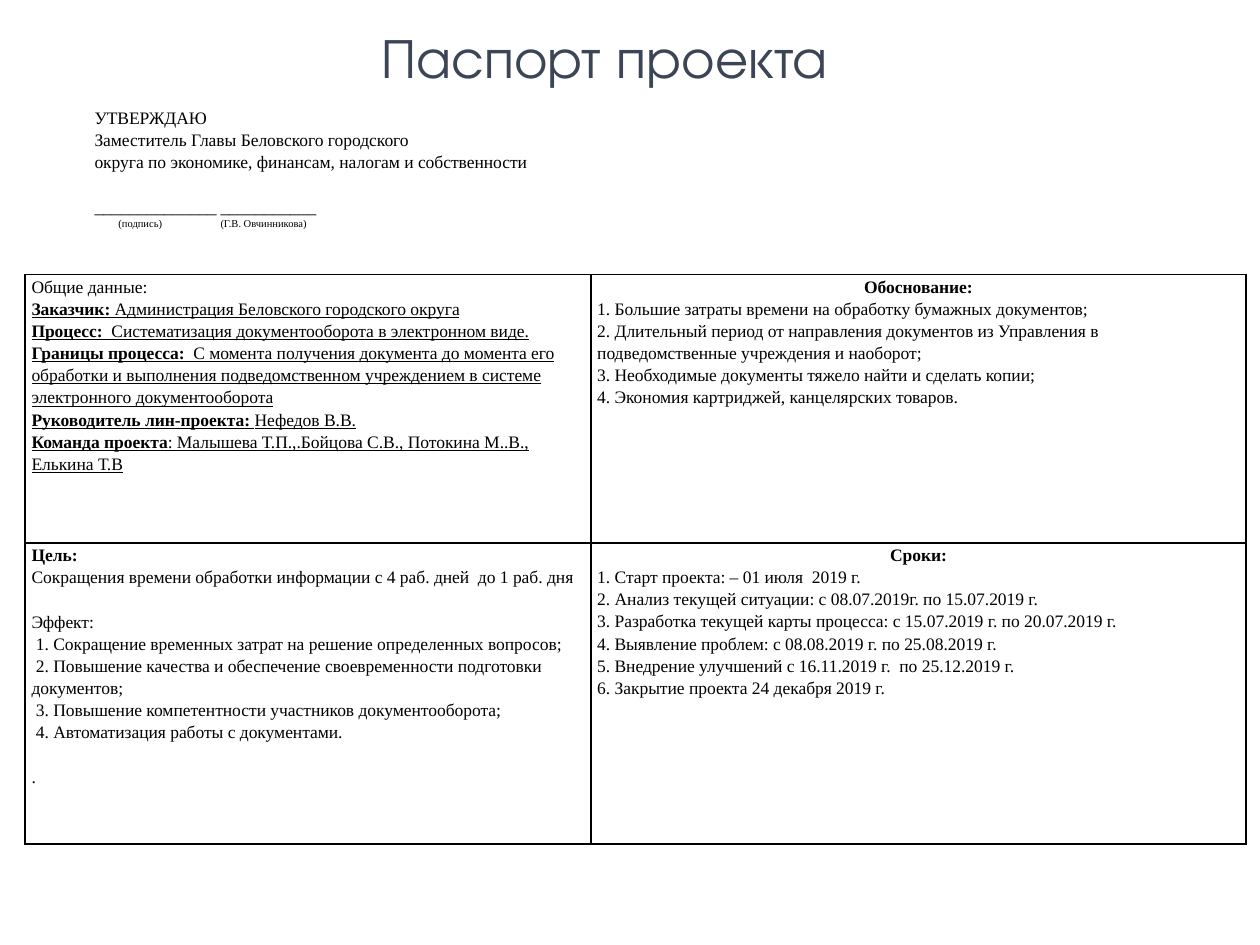
from dataclasses import dataclass
from typing import Optional

from lxml.etree import SubElement as Sub
from pptx import Presentation
from pptx.dml.color import RGBColor as Color
from pptx.enum.text import MSO_ANCHOR as Anchor, PP_ALIGN as Align
from pptx.oxml import parse_xml
from pptx.oxml.ns import nsdecls, qn
from pptx.util import Inches, Pt

HUES = {"title": "3B4555", "ink": "000000"}
SERIF = "Times New Roman"
GAP = 12.7


@dataclass
class Span:
    text: str
    bold: bool = False
    line: bool = False


@dataclass
class Para:
    spans: list[Span]
    align: Align = Align.LEFT
    size: float = 10
    gap: float = 0
    indent: float = 0
    tab: Optional[float] = None


@dataclass
class Block:
    row: int
    col: int
    last: int
    paras: list[Para]


def plain(text: str, **opts) -> Para:
    return Para([Span(text)], **opts)


def head(text: str, align: Align = Align.CENTER) -> Para:
    return Para([Span(text, bold=True)], align)


def fact(label: str, value: str) -> Para:
    return Para([Span(label, True, True), Span(value, line=True)])


def add_run(para, span: Span, size: float, face: str, hue: str) -> None:
    run = para.add_run()
    run.text = span.text
    font = run.font
    font.name, font.size = face, Pt(size)
    font.bold, font.underline = span.bold, span.line
    font.color.rgb = Color.from_string(HUES[hue])


def fill_cell(cell, paras: list[Para]) -> None:
    cell.margin_left = cell.margin_right = Inches(0.05)
    cell.margin_top = cell.margin_bottom = 0
    frame = cell.text_frame
    for num, item in enumerate(paras):
        para = frame.add_paragraph() if num else frame.paragraphs[0]
        para.alignment = item.align
        para.line_spacing = 1.15
        if item.gap:
            para.space_before = Pt(item.gap)
        props = para._p.get_or_add_pPr()
        props.set("marL", "0")
        props.set("indent", str(Inches(item.indent)))
        if item.tab:
            tabs = Sub(props, qn("a:tabLst"))
            Sub(tabs, qn("a:tab"), pos=str(Inches(item.tab)), algn="l")
        for span in item.spans:
            add_run(para, span, item.size, SERIF, "ink")


def set_edges(cell, sides: str) -> None:
    props = cell._tc.get_or_add_tcPr()
    for num, side in enumerate("LRTB"):
        paint = "<a:noFill/>"
        if side in sides:
            paint = f'<a:solidFill><a:srgbClr val="{HUES["ink"]}"/></a:solidFill>'
        edge = f'<a:ln{side} {nsdecls("a")} w="{Pt(1)}">{paint}</a:ln{side}>'
        props.insert(num, parse_xml(edge))


COLS = [4.49, 0.63, 0.31, 4.26]
ROWS = [1.34, 2.13, 2.39]

BLOCKS = [
    Block(0, 0, 1, [
        plain("УТВЕРЖДАЮ", indent=0.5),
        plain("Заместитель Главы Беловского городского", indent=0.5),
        plain("округа по экономике, финансам, налогам и собственности", indent=0.5),
        plain("______________\t___________", gap=GAP, indent=0.5, tab=1.57),
        plain("(подпись)\t(Г.В. Овчинникова)", size=6, indent=0.69, tab=1.6),
    ]),
    Block(1, 0, 0, [
        plain("Общие данные:"),
        fact("Заказчик:", " Администрация Беловского городского округа"),
        fact("Процесс:  ", "Систематизация документооборота в электронном виде."),
        fact("Границы процесса:  ",
             "С момента получения документа до момента его обработки и выполнения "
             "подведомственном учреждением в системе электронного документооборота"),
        fact("Руководитель лин-проекта: ", "Нефедов В.В."),
        fact("Команда проекта",
             ": Малышева Т.П.,.Бойцова С.В., Потокина М..В., Елькина Т.В"),
    ]),
    Block(1, 1, 3, [
        head("Обоснование:"),
        plain("1. Большие затраты времени на обработку бумажных документов;"),
        plain("2. Длительный период от направления документов из Управления "
              "в подведомственные учреждения и наоборот;"),
        plain("3. Необходимые документы тяжело найти и сделать копии;"),
        plain("4. Экономия картриджей, канцелярских товаров."),
    ]),
    Block(2, 0, 0, [
        head("Цель:", Align.LEFT),
        plain("Сокращения времени обработки информации с 4 раб. дней  до 1 раб. дня"),
        plain("Эффект:", gap=GAP),
        plain(" 1. Сокращение временных затрат на решение определенных вопросов;"),
        plain(" 2. Повышение качества и обеспечение своевременности подготовки документов;"),
        plain(" 3. Повышение компетентности участников документооборота;"),
        plain(" 4. Автоматизация работы с документами."),
        plain(".", gap=GAP),
    ]),
    Block(2, 1, 3, [
        head("Сроки:"),
        plain("1. Старт проекта: – 01 июля  2019 г."),
        plain("2. Анализ текущей ситуации: с 08.07.2019г. по 15.07.2019 г."),
        plain("3. Разработка текущей карты процесса: с 15.07.2019 г. по 20.07.2019 г."),
        plain("4. Выявление проблем: с 08.08.2019 г. по 25.08.2019 г."),
        plain("5. Внедрение улучшений с 16.11.2019 г.  по 25.12.2019 г."),
        plain("6. Закрытие проекта 24 декабря 2019 г."),
    ]),
]


def add_title(slide) -> None:
    box = slide.shapes.add_textbox(Inches(2.89), Inches(0.13), Inches(3.82), Inches(1.04))
    frame = box.text_frame
    frame.word_wrap = False
    frame.vertical_anchor = Anchor.TOP
    para = frame.paragraphs[0]
    para.alignment = Align.CENTER
    add_run(para, Span("Паспорт проекта"), 32, "TeX Gyre Adventor", "title")


def add_grid(slide) -> None:
    grid = slide.shapes.add_table(
        len(ROWS), len(COLS), Inches(0.2), Inches(0.84),
        Inches(sum(COLS)), Inches(sum(ROWS))).table
    grid.first_row = grid.horz_banding = False
    for col, width in zip(grid.columns, COLS):
        col.width = Inches(width)
    for num, (row, height) in enumerate(zip(grid.rows, ROWS)):
        row.height = Inches(height)
        for cell in row.cells:
            cell.fill.background()
            set_edges(cell, "LRTB" if num else "B")
    for block in BLOCKS:
        cell = grid.cell(block.row, block.col)
        if block.last > block.col:
            cell.merge(grid.cell(block.row, block.last))
        fill_cell(cell, block.paras)


def main() -> None:
    deck = Presentation()
    deck.slide_width, deck.slide_height = Inches(10), Inches(7.5)
    slide = deck.slides.add_slide(deck.slide_layouts[6])
    add_title(slide)
    add_grid(slide)
    deck.save("out.pptx")


if __name__ == "__main__":
    main()
